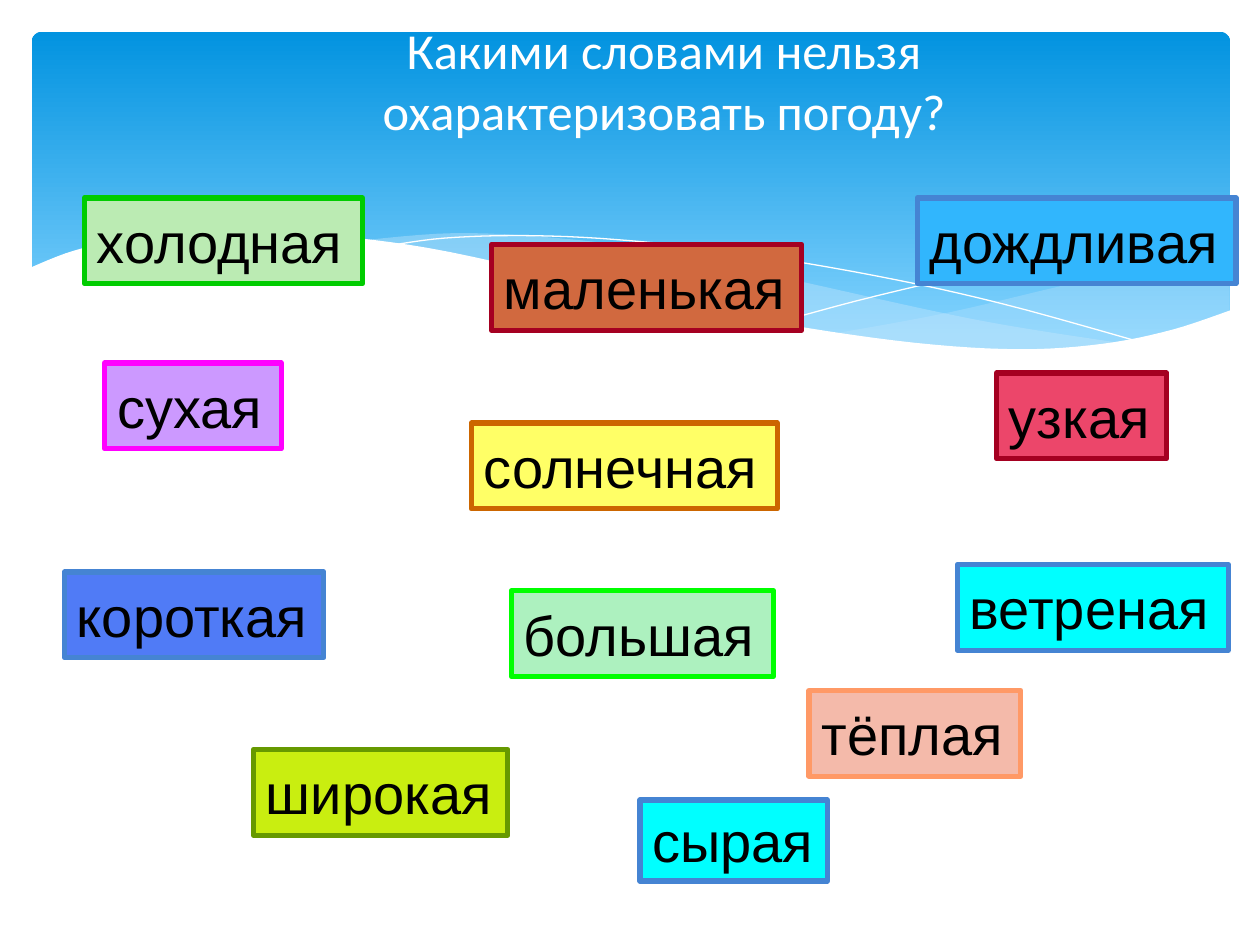
from dataclasses import dataclass

from lxml import etree
from pptx import Presentation
from pptx.dml.color import RGBColor
from pptx.enum import shapes, text
from pptx.oxml import ns
from pptx.util import Cm, Pt


@dataclass(frozen=True)
class Theme:
    white: str = "FFFFFF"
    ink: str = "000000"
    sky: tuple = ((0, "0293E0"), (0.9, "83D3FE"))
    mist: str = "C6E7FC"
    blue: str = "4584D3"
    wine: str = "A50021"
    cyan: str = "00FFFF"
    head: tuple = ("Calibri", 28.8)
    word: tuple = ("Arial", 32)


LOOK = Theme()

# Wave edges: knots in cm, joined by smooth curves
RIGHT_TOP = [(24.79, 5.08), (21.87, 5.66), (19.13, 6.3), (16.79, 6.73)]
RIGHT_LOW = [(16.79, 6.73), (18.59, 6.96), (20.4, 7.06), (22.38, 6.93),
             (23.75, 6.65), (24.79, 6.27)]
MID_TOP = [(22.68, 6.93), (19.69, 6.45), (15.98, 5.64), (13.41, 5.08),
           (11.23, 4.8), (9.17, 4.7), (7.26, 4.85)]
MID_LOW = [(7.26, 4.85), (9.73, 5.26), (11.4, 5.64), (14.38, 6.3),
           (16.89, 6.76), (19, 7.01), (20.78, 7.06), (22.68, 6.93)]
FALL = [(7.85, 4.95), (8.97, 4.8), (10.57, 4.75), (12.42, 4.83),
        (14.78, 5.08), (17.65, 5.56), (20.19, 6.12), (23.04, 6.91)]
RISE = [(15.57, 6.53), (17.65, 5.97), (20.47, 5.33), (22.73, 4.93),
        (24.77, 4.7)]
FRONT = [(24.82, 6.25), (23.62, 6.65), (22.23, 6.93), (20.55, 7.04),
         (18.44, 6.91), (15.9, 6.55), (13.44, 6.07), (11.35, 5.59),
         (8.64, 5), (6.35, 4.72), (4.5, 4.67), (2.69, 4.8), (1.5, 5.05),
         (0.58, 5.41)]
BASE = [(0.58, 8.36), (24.82, 8.36)]

# Word, left, top, width, height in cm, fill, border
CARDS = [
    ("холодная", 1.7, 3.99, 5.61, 1.73, "BBEBB3", "00CC00"),
    ("дождливая", 18.49, 3.99, 6.43, 1.73, "31B6FD", LOOK.blue),
    ("большая", 10.31, 11.91, 5.28, 1.73, "ADF1BF", "00FF00"),
    ("сухая", 2.11, 7.32, 3.56, 1.73, "CC99FF", "FF00FF"),
    ("солнечная", 9.5, 8.53, 6.17, 1.73, "FFFF66", "CC6600"),
    ("ветреная", 19.3, 11.38, 5.46, 1.73, LOOK.cyan, LOOK.blue),
    ("короткая", 1.3, 11.53, 5.23, 1.73, "507BF6", LOOK.blue),
    ("маленькая", 9.91, 4.93, 6.25, 1.73, "D1693F", LOOK.wine),
    ("широкая", 5.11, 15.11, 5.13, 1.73, "C9EE10", "669900"),
    ("тёплая", 16.31, 13.92, 4.27, 1.73, "F4BAAA", "FF9966"),
    ("узкая", 20.09, 7.52, 3.43, 1.73, "EC466A", LOOK.wine),
    ("сырая", 12.9, 16.13, 3.78, 1.63, LOOK.cyan, LOOK.blue),
]


def rgb(code):
    return RGBColor.from_string(code)


def apply(obj, vals):
    for name, val in vals.items():
        setattr(obj, name, val)


def paint(fill, code):
    fill.solid()
    fill.fore_color.rgb = rgb(code)


def write(shape, words, face, tint, align, frame):
    body = shape.text_frame
    apply(body, {"word_wrap": True, "auto_size": text.MSO_AUTO_SIZE.NONE,
                 "vertical_anchor": text.MSO_ANCHOR.MIDDLE, **frame})
    para = body.paragraphs[0]
    para.alignment = align
    run = para.add_run()
    run.text = words
    apply(run.font, {"name": face[0], "size": Pt(face[1])})
    run.font.color.rgb = rgb(tint)


def smooth(knots, steps=6):
    """Sample a Catmull-Rom curve through the knots."""
    ends = [knots[0], *knots, knots[-1]]
    dots = [knots[0]]
    for a, b, c, d in zip(ends, ends[1:], ends[2:], ends[3:]):
        for n in range(1, steps + 1):
            t = n / steps
            dots.append(tuple(
                q + t * ((r - p) + t * ((2 * p - 5 * q + 4 * r - s)
                         + t * (3 * q - p - 3 * r + s))) / 2
                for p, q, r, s in zip(a, b, c, d)))
    return dots


def draw(slide, dots, close):
    spots = [(Cm(x), Cm(y)) for x, y in dots]
    pen = slide.shapes.build_freeform(*spots[0])
    pen.add_line_segments(spots[1:], close=close)
    shape = pen.convert_to_shape()
    shape.shadow.inherit = False
    return shape


def add_wave(slide, dots, code, alpha=None):
    wave = draw(slide, dots, True)
    paint(wave.fill, code)
    wave.line.fill.background()
    if alpha:
        tint = wave.element.spPr.find(".//" + ns.qn("a:srgbClr"))
        etree.SubElement(tint, ns.qn("a:alpha"), val=str(alpha * 1000))


def add_curve(slide, knots):
    curve = draw(slide, smooth(knots), False)
    curve.fill.background()
    paint(curve.line.fill, LOOK.white)
    curve.line.width = Pt(0)


def add_sky(slide):
    sky = slide.shapes.add_shape(shapes.MSO_SHAPE.ROUNDED_RECTANGLE,
                                 Cm(0.64), Cm(0.64), Cm(24.16), Cm(6.86))
    sky.adjustments[0] = 0.03
    sky.shadow.inherit = False
    sky.line.fill.background()
    sky.fill.gradient()
    sky.fill.gradient_angle = 270
    for stop, (pos, code) in zip(sky.fill.gradient_stops, LOOK.sky):
        stop.position = pos
        stop.color.rgb = rgb(code)


def add_title(slide, words):
    title = slide.shapes.title
    apply(title, {"left": Cm(5.49), "top": Cm(0.53),
                  "width": Cm(15.8), "height": Cm(2.16)})
    write(title, words, LOOK.head, LOOK.white, text.PP_ALIGN.CENTER, {})
    # Bring the title in front of the sky
    slide.shapes.element.append(title.element)


def add_card(slide, word, left, top, width, height, fill, edge):
    card = slide.shapes.add_shape(shapes.MSO_SHAPE.RECTANGLE,
                                  *map(Cm, (left, top, width, height)))
    card.shadow.inherit = False
    paint(card.fill, fill)
    paint(card.line.fill, edge)
    card.line.width = Pt(3)
    write(card, word, LOOK.word, LOOK.ink, text.PP_ALIGN.LEFT,
          {"margin_right": 0})


def main():
    deck = Presentation()
    apply(deck, {"slide_width": Cm(25.4), "slide_height": Cm(19.05)})
    slide = deck.slides.add_slide(deck.slide_layouts[5])

    # Sky with waves
    add_sky(slide)
    add_wave(slide, smooth(RIGHT_TOP) + smooth(RIGHT_LOW), LOOK.mist, 29)
    add_wave(slide, smooth(MID_TOP) + smooth(MID_LOW), LOOK.mist, 40)
    add_curve(slide, FALL)
    add_curve(slide, RISE)
    add_wave(slide, smooth(FRONT) + BASE, LOOK.white)

    # Question and word cards
    add_title(slide, "Какими словами нельзя охарактеризовать погоду?")
    for card in CARDS:
        add_card(slide, *card)
    deck.save("out.pptx")


if __name__ == "__main__":
    main()
